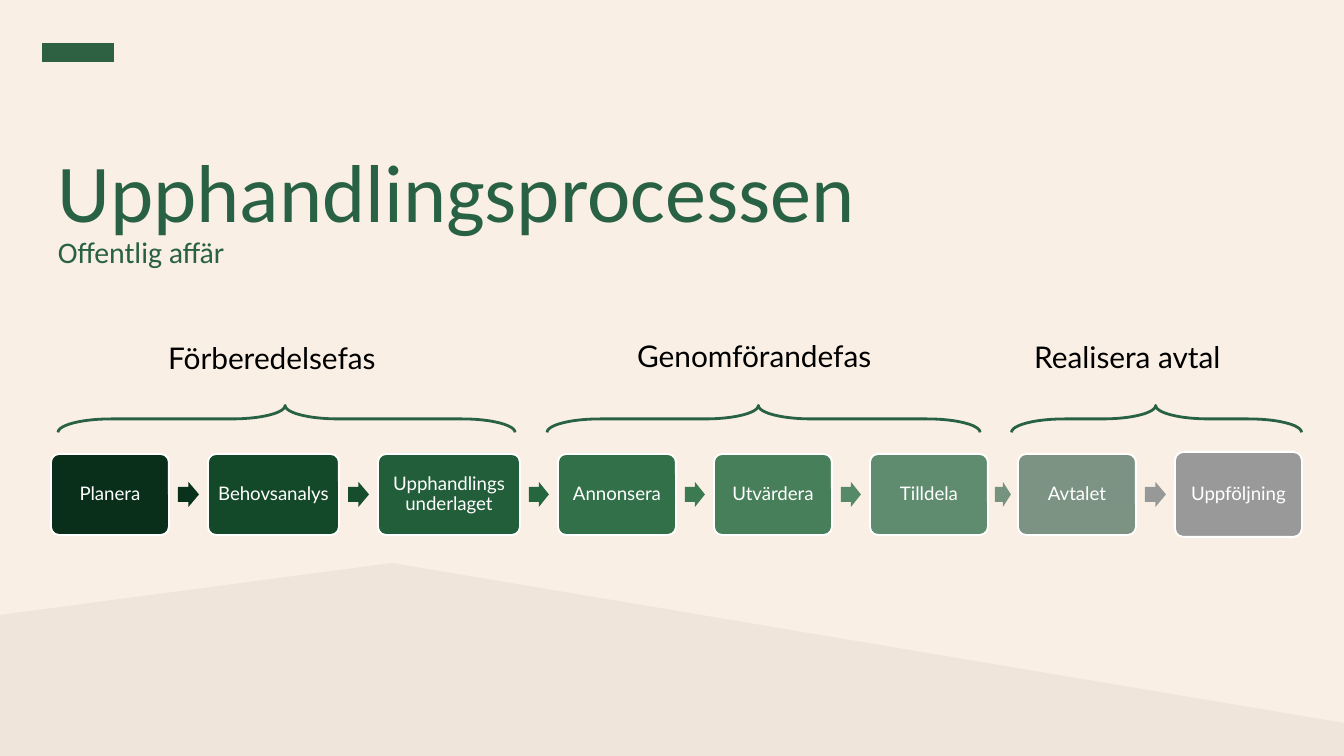
from pptx import Presentation
from pptx.dml.color import RGBColor
from pptx.enum.shapes import MSO_SHAPE
from pptx.enum.text import MSO_ANCHOR, MSO_AUTO_SIZE, PP_ALIGN
from pptx.util import Pt

ROUND = MSO_SHAPE.ROUNDED_RECTANGLE
ARROW = MSO_SHAPE.RIGHT_ARROW
BRACE = MSO_SHAPE.LEFT_BRACE
MIDDLE, BOTTOM = MSO_ANCHOR.MIDDLE, MSO_ANCHOR.BOTTOM
LEFT, CENTER = PP_ALIGN.LEFT, PP_ALIGN.CENTER
FIXED = MSO_AUTO_SIZE.NONE
PX = 914400 / 134.4
GREEN, WHITE = "296144", "FFFFFF"


def paint(target, color):
    if hasattr(target, "solid"):
        target.solid()
        target = target.fore_color
    target.rgb = RGBColor.from_string(color)


def place(kind, *box):
    shape = slide.shapes.add_shape(kind, *[round(v * PX) for v in box])
    shape.shadow.inherit = False
    return shape


deck = Presentation()
deck.slide_width = round(1344 * PX)
deck.slide_height = round(756 * PX)
slide = deck.slides.add_slide(deck.slide_layouts[5])
paint(slide.background.fill, "FAEFE5")

path = slide.shapes.build_freeform(0, 615, PX)
path.add_line_segments([(392, 563), (1344, 723), (1344, 756), (0, 756)])
hill = path.convert_to_shape()
hill.shadow.inherit = False
paint(hill.fill, "F0E5DB")
hill.line.fill.background()

logo = place(MSO_SHAPE.RECTANGLE, 42, 43, 72, 19)
paint(logo.fill, "2E6141")
logo.line.fill.background()

title = slide.shapes.title
spot = {"left": 58, "top": 81, "width": 978, "height": 189}
for name, value in spot.items():
    setattr(title, name, round(value * PX))
frame = title.text_frame
look = {"margin_left": 0, "margin_right": 0, "margin_top": 0,
        "margin_bottom": 0, "vertical_anchor": BOTTOM,
        "word_wrap": True, "auto_size": FIXED}
for name, value in look.items():
    setattr(frame, name, value)
para = frame.paragraphs[0]
para.alignment = LEFT
para.line_spacing = 0.85
for text, size in [("Upphandlingsprocessen", 44), ("Offentlig affär", 16)]:
    if para.runs:
        para.add_line_break()
    run = para.add_run()
    run.text = text
    run.font.name = "Calibri"
    run.font.size = Pt(size)
    paint(run.font.color, GREEN)

steps = [
    ("Planera", 51, 118, "092E19", "0A311B"),
    ("Behovsanalys", 208, 131, "134829", "164E2D"),
    ("Upphandlings underlaget", 378, 142, "215E39", "26663F"),
    ("Annonsera", 558, 118, "32704A", "3C7A52"),
    ("Utvärdera", 714, 118, "477F5B", "568967"),
    ("Tilldela", 870, 118, "5F8B6E", "75937E"),
    ("Avtalet", 1018, 118, "7C9283", "979998"),
    ("Uppföljning", 1175, 127, "999999", None),
]
pad = round(7 * PX)
look = {"margin_left": pad, "margin_right": pad, "margin_top": pad,
        "margin_bottom": pad, "vertical_anchor": MIDDLE, "word_wrap": True}
for i, (text, x, width, color, tint) in enumerate(steps):
    high = 81 if tint else 85
    step = place(ROUND, x, 494 - high // 2, width, high)
    step.adjustments[0] = 0.1
    paint(step.fill, color)
    paint(step.line.fill, WHITE)
    step.line.width = Pt(1)
    frame = step.text_frame
    for name, value in look.items():
        setattr(frame, name, value)
    para = frame.paragraphs[0]
    para.alignment = CENTER
    para.line_spacing = 0.9
    run = para.add_run()
    run.text = text
    run.font.name = "Lato"
    run.font.size = Pt(10)
    paint(run.font.color, WHITE)
    if tint:
        end = x + width
        gap = steps[i + 1][1] - end
        arrow = place(ARROW, end + gap // 4, 482, round(gap * 0.53), 25)
        arrow.adjustments[0] = 0.6
        arrow.adjustments[1] = 0.5
        paint(arrow.fill, tint)
        arrow.line.fill.background()

phases = [
    ("Förberedelsefas", 155, 333, 286, 457, 0.503),
    ("Genomförandefas", 624, 331, 763, 433, 0.512),
    ("Realisera avtal", 1021, 332, 1156, 290, 0.503),
]
for text, x, y, mid, span, tip in phases:
    brace = place(BRACE, mid - 13, 419 - span / 2, 27, span)
    brace.rotation = 90
    brace.adjustments[0] = 1.97
    brace.adjustments[1] = tip
    brace.fill.background()
    paint(brace.line.fill, GREEN)
    brace.line.width = Pt(1.5)
    box = [round(v * PX) for v in (x, y, 280, 50)]
    label = slide.shapes.add_textbox(*box)
    label.text_frame.word_wrap = True
    run = label.text_frame.paragraphs[0].add_run()
    run.text = text
    run.font.name = "Lato"
    run.font.size = Pt(16)
    paint(run.font.color, "000000")

deck.save("out.pptx")
